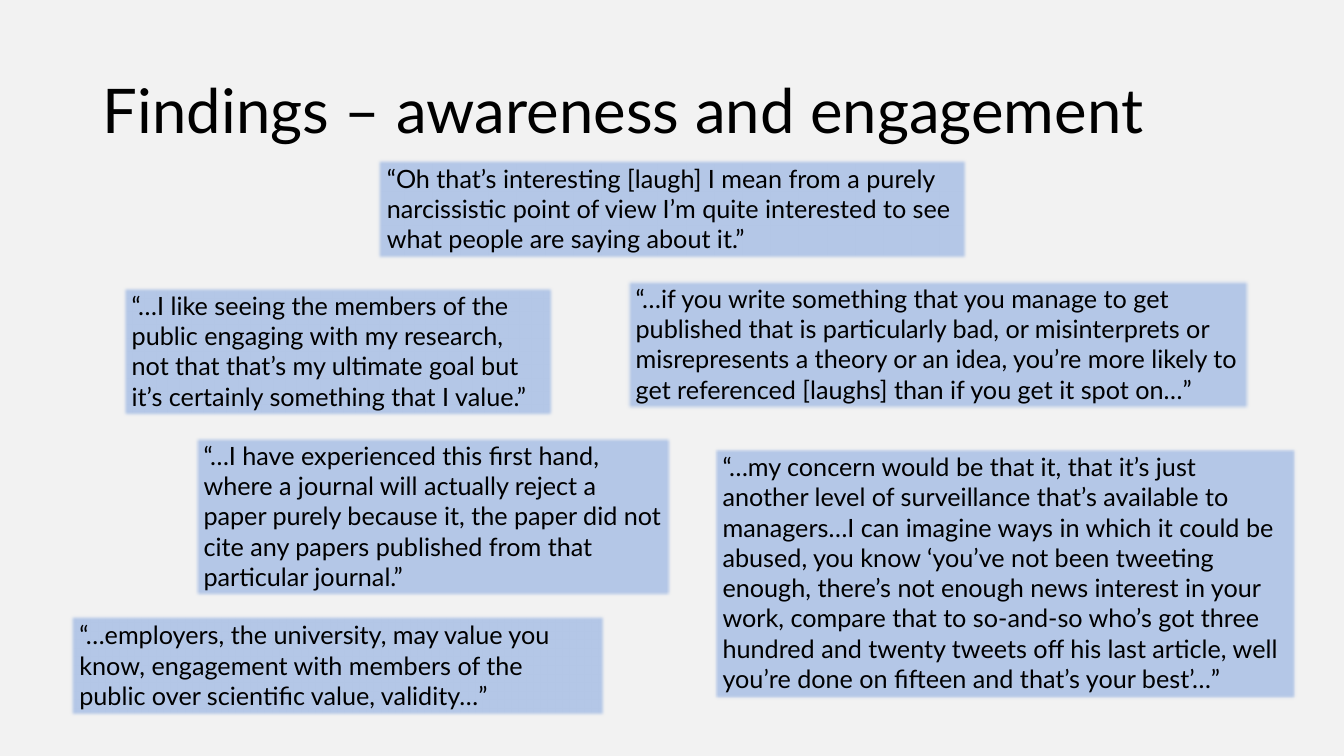
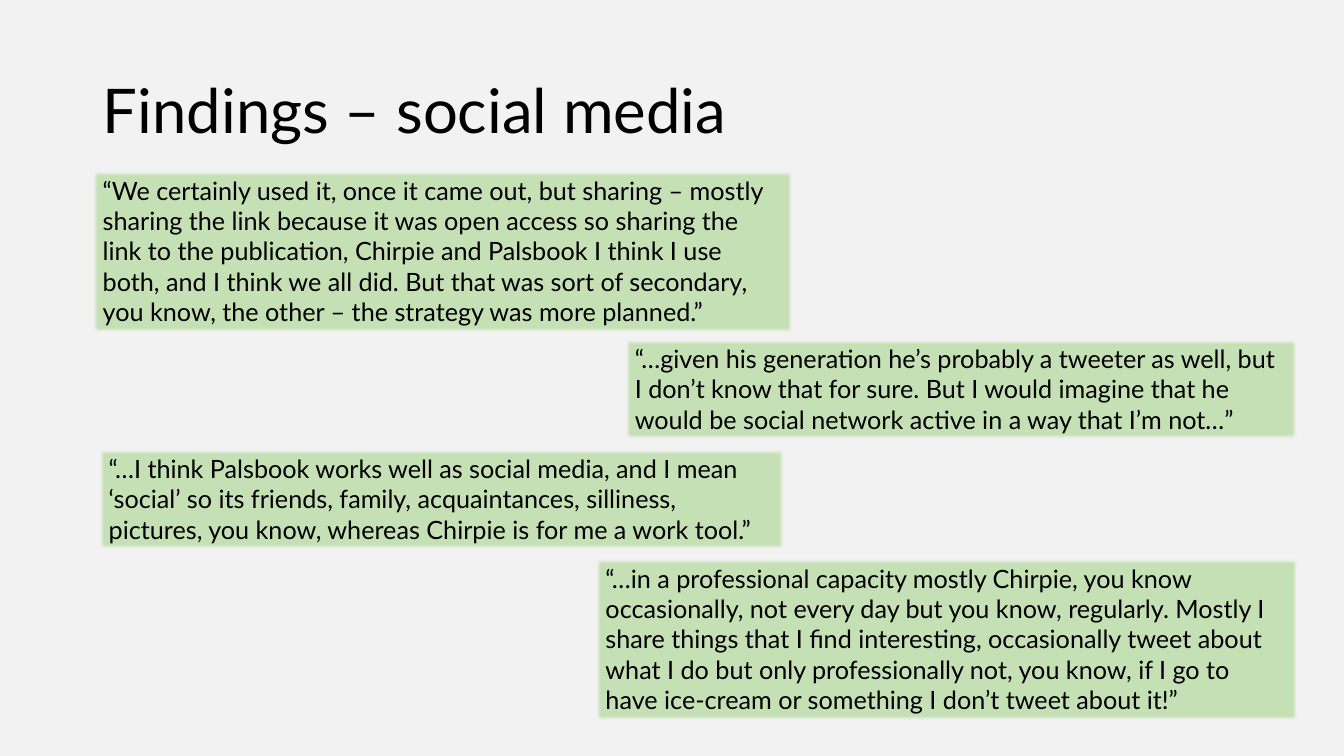
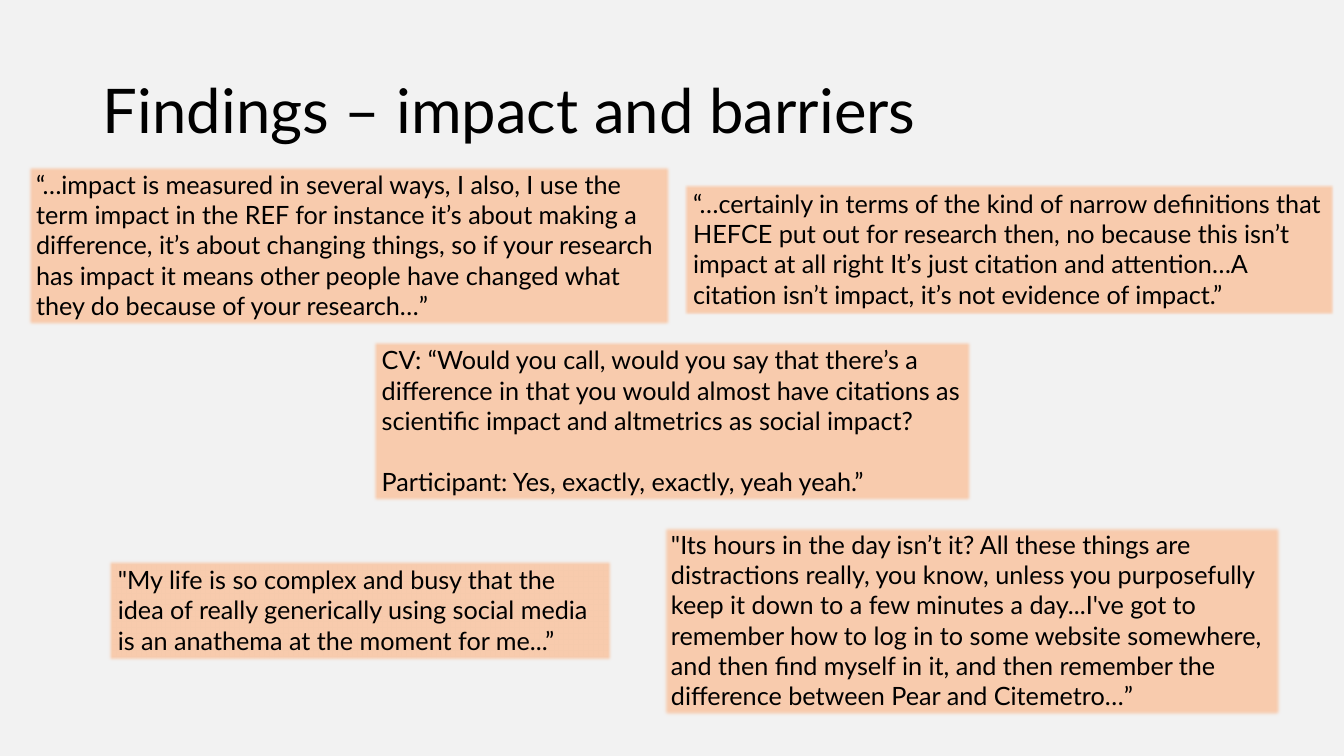
import pptx
import pptx.dml.color
import pptx.enum.shapes
import pptx.enum.text
import pptx.oxml.ns
import pptx.util
from lxml import etree

Cm, Pt = pptx.util.Cm, pptx.util.Pt
RGBColor = pptx.dml.color.RGBColor

FONT = "Lato"
BLACK = RGBColor(0x00, 0x00, 0x00)
PALE_GREY = RGBColor(0xF2, 0xF2, 0xF2)
BLUE = RGBColor(0xB4, 0xC7, 0xE7)
GREEN = RGBColor(0xC5, 0xE0, 0xB4)
ORANGE = RGBColor(0xF8, 0xCB, 0xAD)

TITLE_SIZE = Pt(44)
QUOTE_SIZE = Pt(18)
LINE_HEIGHT = Cm(0.77)
QUOTE_PADDING = Cm(0.25)  # top and bottom together
SOFT_EDGE = Pt(2.5)

# Each quote: left, top and width in cm, number of lines, paragraphs.
AWARENESS = [
    (9.5, 3.99, 14.88, 3, [
        "“Oh that’s interesting [laugh] I mean from a purely narcissistic point of view "
        "I’m quite interested to see what people are saying about it.”"]),
    (3.07, 7.19, 10.9, 4, [
        "“…I like seeing the members of the public engaging with my research, not that "
        "that’s my ultimate goal but it’s certainly something that I value.”"]),
    (15.77, 7.01, 15.75, 4, [
        "“…if you write something that you manage to get published that is particularly "
        "bad, or misinterprets or misrepresents a theory or an idea, you’re more likely "
        "to get referenced [laughs] than if you get it spot on…”"]),
    (4.88, 10.97, 12.07, 5, [
        "“…I have experienced this first hand, where a journal will actually reject a "
        "paper purely because it, the paper did not cite any papers published from that "
        "particular journal.”"]),
    (17.96, 11.25, 14.73, 8, [
        "“…my concern would be that it, that it’s just another level of surveillance "
        "that’s available to managers…I can imagine ways in which it could be abused, "
        "you know ‘you’ve not been tweeting enough, there’s not enough news interest in "
        "your work, compare that to so-and-so who’s got three hundred and twenty tweets "
        "off his last article, well you’re done on fifteen and that’s your best’…”"]),
    (1.75, 15.49, 13.51, 3, [
        "“…employers, the university, may value you know, engagement with members of the "
        "public over scientific value, validity…”"]),
]

SOCIAL_MEDIA = [
    (2.34, 4.29, 17.63, 5, [
        "“We certainly used it, once it came out, but sharing – mostly sharing the link "
        "because it was open access so sharing the link to the publication, Chirpie and "
        "Palsbook I think I use both, and I think we all did. But that was sort of "
        "secondary, you know, the other – the strategy was more planned.”"]),
    (15.75, 8.53, 16.94, 3, [
        "“…given his generation he’s probably a tweeter as well, but I don’t know that "
        "for sure. But I would imagine that he would be social network active in a way "
        "that I’m not…”"]),
    (2.49, 11.3, 17.27, 3, [
        "“…I think Palsbook works well as social media, and I mean ‘social’ so its "
        "friends, family, acquaintances, silliness, pictures, you know, whereas Chirpie "
        "is for me a work tool.”"]),
    (15.01, 14.07, 17.68, 5, [
        "“…in a professional capacity mostly Chirpie, you know occasionally, not every "
        "day but you know, regularly. Mostly I share things that I find interesting, "
        "occasionally tweet about what I do but only professionally not, you know, if I "
        "go to have ice-cream or something I don’t tweet about it!”"]),
]

IMPACT = [
    (0.66, 4.14, 16.26, 5, [
        "“…impact is measured in several ways, I also, I use the term impact in the REF "
        "for instance it’s about making a difference, it’s about changing things, so if "
        "your research has impact it means other people have changed what they do "
        "because of your research…”"]),
    (17.22, 4.62, 16.41, 4, [
        "“…certainly in terms of the kind of narrow definitions that HEFCE put out for "
        "research then, no because this isn’t impact at all right It’s just citation and "
        "attention…A citation isn’t impact, it’s not evidence of impact.”"]),
    (9.37, 8.56, 15.14, 5, [
        "CV: “Would you call, would you say that there’s a difference in that you would "
        "almost have citations as scientific impact and altmetrics as social impact?",
        "Participant: Yes, exactly, exactly, yeah yeah.”"]),
    (2.72, 14.1, 12.73, 3, [
        "\"My life is so complex and busy that the idea of really generically using "
        "social media is an anathema at the moment for me...”"]),
    (16.66, 13.21, 15.65, 6, [
        "\"Its hours in the day isn’t it? All these things are distractions really, you "
        "know, unless you purposefully keep it down to a few minutes a day...I've got to "
        "remember how to log in to some website somewhere, and then find myself in it, "
        "and then remember the difference between Pear and Citemetro…”"]),
]


def style_paragraph(paragraph, size):
    paragraph.alignment = pptx.enum.text.PP_ALIGN.LEFT
    for run in paragraph.runs:
        run.font.name = FONT
        run.font.size = size
        run.font.color.rgb = BLACK


def set_title(slide, text):
    title = slide.shapes.title
    title.left, title.top = Cm(2.34), Cm(1.02)
    title.width, title.height = Cm(29.21), Cm(3.68)
    frame = title.text_frame
    frame.text = text
    frame.word_wrap = True
    frame.vertical_anchor = pptx.enum.text.MSO_ANCHOR.MIDDLE
    heading = frame.paragraphs[0]
    heading.line_spacing = 0.9
    style_paragraph(heading, TITLE_SIZE)


def soften_edges(shape):
    """Replace the theme shadow with a narrow soft edge."""
    shape.shadow.inherit = False
    effects = shape.fill._xPr.find(pptx.oxml.ns.qn("a:effectLst"))
    etree.SubElement(effects, pptx.oxml.ns.qn("a:softEdge"), rad=str(SOFT_EDGE))


def add_quote(slide, color, left, top, width, lines, paragraphs):
    quote = slide.shapes.add_shape(
        pptx.enum.shapes.MSO_SHAPE.RECTANGLE, Cm(left), Cm(top), Cm(width),
        lines * LINE_HEIGHT + QUOTE_PADDING)
    quote.fill.solid()
    quote.fill.fore_color.rgb = color
    quote.line.fill.background()
    soften_edges(quote)
    frame = quote.text_frame
    frame.text = "\n".join(paragraphs)
    frame.word_wrap = True
    frame.auto_size = pptx.enum.text.MSO_AUTO_SIZE.SHAPE_TO_FIT_TEXT
    frame.vertical_anchor = pptx.enum.text.MSO_ANCHOR.TOP
    for paragraph in frame.paragraphs:
        style_paragraph(paragraph, QUOTE_SIZE)
    for reply in frame.paragraphs[1:]:
        reply.space_before = LINE_HEIGHT


def add_findings_slide(deck, topic, color, quotes):
    slide = deck.slides.add_slide(deck.slide_layouts.get_by_name("Title Only"))
    set_title(slide, f"Findings – {topic}")
    for quote in quotes:
        add_quote(slide, color, *quote)


def main():
    deck = pptx.Presentation()
    deck.slide_width, deck.slide_height = Cm(33.87), Cm(19.05)
    background = deck.slide_master.background.fill
    background.solid()
    background.fore_color.rgb = PALE_GREY
    add_findings_slide(deck, "awareness and engagement", BLUE, AWARENESS)
    add_findings_slide(deck, "social media", GREEN, SOCIAL_MEDIA)
    add_findings_slide(deck, "impact and barriers", ORANGE, IMPACT)
    deck.save("out.pptx")


if __name__ == "__main__":
    main()
